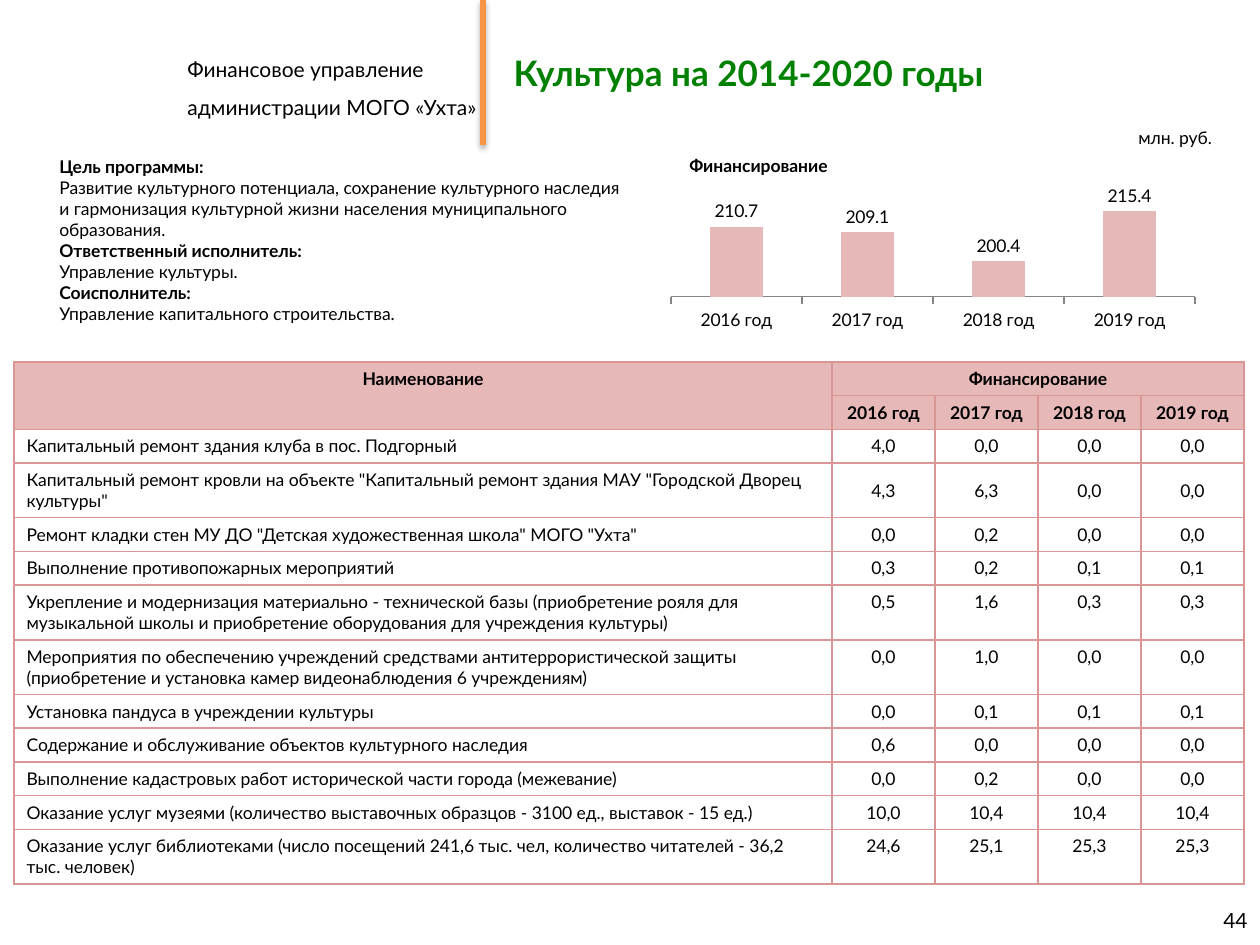
import pptx
import pptx.util
import pptx.chart.data
import pptx.dml.color
import pptx.enum.chart
import pptx.enum.shapes
import pptx.enum.text
import pptx.oxml

PX = 914400 // 126
FONT = "Lato"
BLACK, WHITE, GREEN = "000000", "FFFFFF", "008000"
ORANGE, PINK, ROSE, GREY = "F79646", "E6B9B8", "D99694", "868686"
NS = 'xmlns:a="http://schemas.openxmlformats.org/drawingml/2006/main"'
CHART_NS = 'xmlns:c="http://schemas.openxmlformats.org/drawingml/2006/chart"'
ALIGN = pptx.enum.text.PP_ALIGN
ANCHOR = pptx.enum.text.MSO_ANCHOR

YEARS = ["2016 год", "2017 год", "2018 год", "2019 год"]
FUNDING = [210.7, 209.1, 200.4, 215.4]
GOALS = [
    ("Цель программы:", True),
    ("Развитие культурного потенциала, сохранение культурного наследия", False),
    ("и гармонизация культурной жизни населения муниципального", False),
    ("образования.", False),
    ("Ответственный исполнитель:", True),
    ("Управление культуры.", False),
    ("Соисполнитель:", True),
    ("Управление капитального строительства.", False),
]
# Name, values by year, number of text lines
MEASURES = [
    ("Капитальный ремонт здания клуба в пос. Подгорный", "4,0 0,0 0,0 0,0", 1),
    ('Капитальный ремонт кровли на объекте "Капитальный ремонт здания МАУ '
     '"Городской Дворец культуры"', "4,3 6,3 0,0 0,0", 2),
    ('Ремонт кладки стен МУ ДО "Детская художественная школа" МОГО "Ухта"',
     "0,0 0,2 0,0 0,0", 1),
    ("Выполнение противопожарных мероприятий", "0,3 0,2 0,1 0,1", 1),
    ("Укрепление и модернизация материально - технической базы (приобретение рояля "
     "для музыкальной школы и приобретение оборудования для учреждения культуры)",
     "0,5 1,6 0,3 0,3", 2),
    ("Мероприятия по обеспечению учреждений средствами антитеррористической защиты "
     "(приобретение и установка камер видеонаблюдения 6 учреждениям)",
     "0,0 1,0 0,0 0,0", 2),
    ("Установка пандуса в учреждении культуры", "0,0 0,1 0,1 0,1", 1),
    ("Содержание и обслуживание объектов культурного наследия", "0,6 0,0 0,0 0,0", 1),
    ("Выполнение кадастровых работ исторической части города (межевание)",
     "0,0 0,2 0,0 0,0", 1),
    ("Оказание услуг музеями (количество выставочных образцов - 3100 ед., "
     "выставок - 15 ед.)", "10,0 10,4 10,4 10,4", 1),
    ("Оказание услуг библиотеками (число посещений 241,6 тыс. чел, количество "
     "читателей - 36,2 тыс. человек)", "24,6 25,1 25,3 25,3", 2),
]
ROW_HEIGHT = {1: 33, 2: 54}


def px(*lengths):
    return [pptx.util.Emu(n * PX) for n in lengths]


def rgb(color):
    return pptx.dml.color.RGBColor.from_string(color)


def set_font(font, size, bold=False, color=BLACK):
    font.name, font.size, font.bold = FONT, pptx.util.Pt(size), bold
    font.color.rgb = rgb(color)


def add_text(slide, box, lines, size=10, align=ALIGN.LEFT, spacing=None, wrap=False):
    """Add a text box; lines holds (text, bold) pairs."""
    tf = slide.shapes.add_textbox(*px(*box)).text_frame
    tf.word_wrap = wrap
    if wrap:
        tf.vertical_anchor = ANCHOR.MIDDLE
    else:
        tf.auto_size = pptx.enum.text.MSO_AUTO_SIZE.SHAPE_TO_FIT_TEXT
    for i, (text, bold) in enumerate(lines):
        p = tf.paragraphs[0] if i == 0 else tf.add_paragraph()
        p.text, p.alignment = text, align
        if spacing:
            p.line_spacing = spacing
        set_font(p.font, size, bold)


def add_header(slide, x, y, w, h):
    add_text(slide, (x + 175, y + 38, 315, 83),
             [("Финансовое управление", False), ("администрации МОГО «Ухта»", False)],
             size=12, spacing=1.5)

    # Divider with a soft shadow
    line = slide.shapes.add_connector(pptx.enum.shapes.MSO_CONNECTOR.STRAIGHT,
                                      *px(x + 483, y, x + 483, y + h))
    line.line.color.rgb = rgb(ORANGE)
    line.line.width = pptx.util.Pt(3)
    line._element.spPr.append(pptx.oxml.parse_xml(
        f'<a:effectLst {NS}><a:outerShdw blurRad="40000" dist="23000" dir="5400000" '
        f'rotWithShape="0"><a:srgbClr val="{BLACK}"><a:alpha val="35000"/></a:srgbClr>'
        '</a:outerShdw></a:effectLst>'))

    # Title
    title = slide.shapes.title
    title.left, title.top, title.width, title.height = px(x + 501, y, w - 501, h)
    tf = title.text_frame
    tf.text, tf.vertical_anchor = "Культура на 2014-2020 годы", ANCHOR.MIDDLE
    tf.paragraphs[0].alignment = ALIGN.LEFT
    set_font(tf.paragraphs[0].font, 20, True, GREEN)


def add_funding_chart(slide, x, y, w, h):
    data = pptx.chart.data.CategoryChartData(number_format="0.0")
    data.categories = YEARS
    data.add_series("Финансирование", FUNDING)
    chart = slide.shapes.add_chart(pptx.enum.chart.XL_CHART_TYPE.COLUMN_CLUSTERED,
                                   *px(x, y, w, h), data).chart
    chart.has_legend = chart.has_title = False
    set_font(chart.font, 10)

    plot = chart.plots[0]
    plot.gap_width, plot.vary_by_categories = 150, False
    fill = plot.series[0].format.fill
    fill.solid()
    fill.fore_color.rgb = rgb(PINK)
    plot.has_data_labels = True
    labels = plot.data_labels
    labels.show_value = True
    labels.number_format, labels.number_format_is_linked = "#,##0.0", False
    labels.position = pptx.enum.chart.XL_LABEL_POSITION.OUTSIDE_END
    set_font(labels.font, 10)

    axis = chart.value_axis
    axis.visible = axis.has_major_gridlines = False
    axis.minimum_scale, axis.maximum_scale = 190, 220
    axis = chart.category_axis
    axis.major_tick_mark = pptx.enum.chart.XL_TICK_MARK.OUTSIDE
    axis.format.line.color.rgb = rgb(GREY)
    set_font(axis.tick_labels.font, 10)

    # Fixed plot area
    area = chart._chartSpace.chart.plotArea
    for old in area.findall("{*}layout"):
        area.remove(old)
    sizes = "".join(f'<c:{tag} val="{val}"/>' for tag, val in
                    (("x", 0.02), ("y", 0.07), ("w", 0.96), ("h", 0.69)))
    area.insert(0, pptx.oxml.parse_xml(
        f'<c:layout {CHART_NS}><c:manualLayout><c:layoutTarget val="inner"/>'
        f'<c:xMode val="edge"/><c:yMode val="edge"/>{sizes}'
        '</c:manualLayout></c:layout>'))


def format_cell(cell, text, fill=WHITE, bold=False, align=ALIGN.CENTER, anchor=ANCHOR.TOP):
    for side in ("lnL", "lnR", "lnT", "lnB"):
        cell._tc.get_or_add_tcPr().append(pptx.oxml.parse_xml(
            f'<a:{side} {NS} w="12700"><a:solidFill><a:srgbClr val="{ROSE}"/>'
            f'</a:solidFill></a:{side}>'))
    cell.fill.solid()
    cell.fill.fore_color.rgb = rgb(fill)
    cell.text, cell.vertical_anchor = text, anchor
    p = cell.text_frame.paragraphs[0]
    p.alignment = align
    set_font(p.font, 10, bold)


def add_measures_table(slide, x, y, w, year_width):
    heights = [ROW_HEIGHT[n] for n in [1, 1] + [lines for _, _, lines in MEASURES]]
    table = slide.shapes.add_table(len(heights), 5, *px(x, y, w, sum(heights))).table
    table.first_row = table.horz_banding = False
    for column, width in zip(table.columns, px(w - 4 * year_width, *[year_width] * 4)):
        column.width = width
    for row, height in zip(table.rows, px(*heights)):
        row.height = height

    # Two header rows
    header = [["Наименование", "Финансирование", "", "", ""], [""] + YEARS]
    for r, texts in enumerate(header):
        for c, text in enumerate(texts):
            format_cell(table.cell(r, c), text, PINK, bold=True)
    table.cell(0, 0).merge(table.cell(1, 0))
    table.cell(0, 1).merge(table.cell(0, 4))

    # Measures
    for r, (name, values, _) in enumerate(MEASURES, 2):
        format_cell(table.cell(r, 0), name, align=ALIGN.LEFT)
        for c, value in enumerate(values.split(), 1):
            format_cell(table.cell(r, c), value,
                        anchor=ANCHOR.MIDDLE if r < 4 else ANCHOR.TOP)


def main():
    prs = pptx.Presentation()
    prs.slide_width, prs.slide_height = px(1260, 945)
    slide = prs.slides.add_slide(prs.slide_layouts[5])
    add_header(slide, 0, 0, 1260, 145)
    add_text(slide, (966, 895, 294, 50), [("44", False)], 12, ALIGN.RIGHT, wrap=True)
    add_funding_chart(slide, 660, 185, 546, 147)
    add_measures_table(slide, 14, 362, 1230, 103)
    add_text(slide, (47, 150, 609, 183), GOALS)
    add_text(slide, (1126, 121, 101, 34), [("млн. руб.", False)])
    add_text(slide, (677, 149, 184, 34), [("Финансирование", True)])
    prs.save("out.pptx")


if __name__ == "__main__":
    main()
